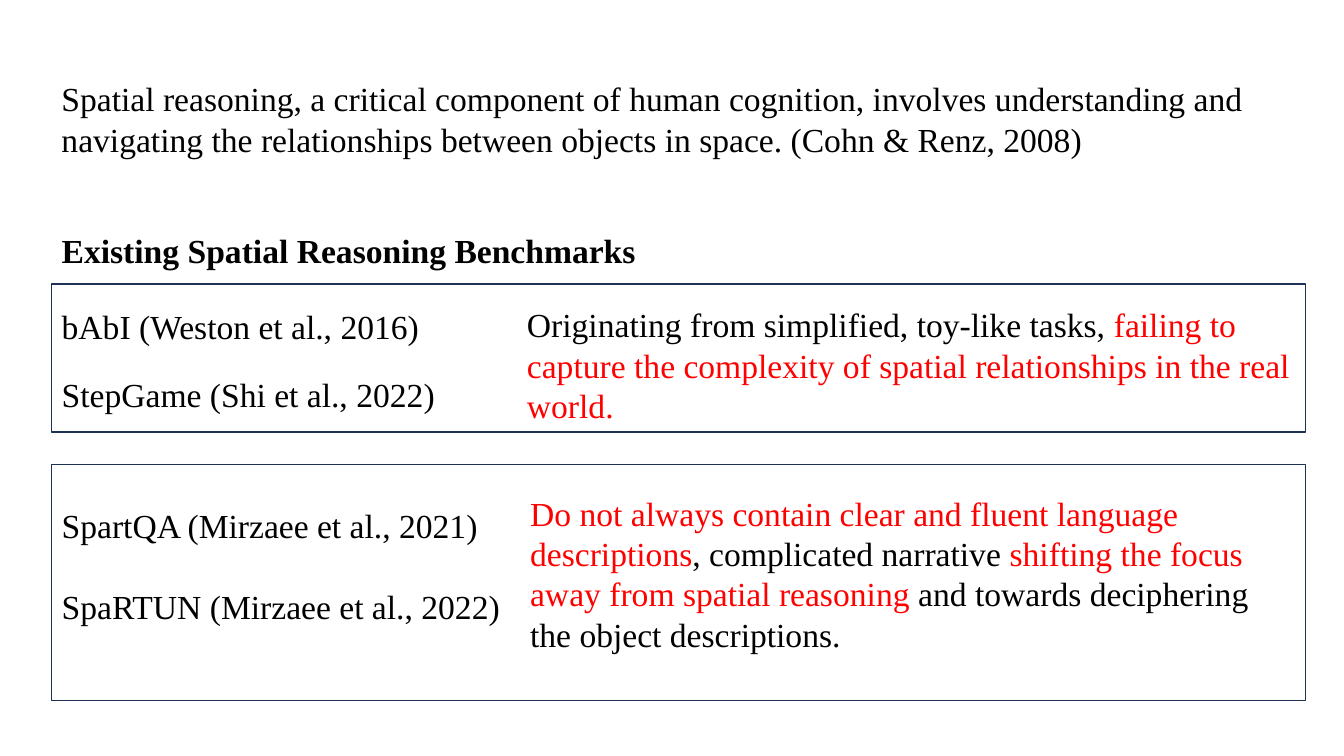
from dataclasses import dataclass

import pptx
import pptx.dml.color
import pptx.enum.shapes
import pptx.enum.text
import pptx.util
from pptx.util import Cm, Pt


@dataclass(frozen=True)
class Theme:
    font: str = "Times New Roman"
    size: float = 24
    text: str = "000000"
    criticism: str = "FF0000"
    frame: str = "1E3256"
    frame_width: float = 1


THEME = Theme()

INTRO = [("Spatial reasoning, a critical component of human cognition, involves understanding and "
          "navigating the relationships between objects in space. (Cohn & Renz, 2008)", THEME.text)]
HEADING = "Existing Spatial Reasoning Benchmarks"

# Lengths in centimetres; each remark is a list of (text, colour)
GROUPS = [
    {
        "benchmarks": ["bAbI (Weston et al., 2016)", "StepGame (Shi et al., 2022)"],
        "remark": [
            ("Originating from simplified, toy-like tasks, ", THEME.text),
            ("failing to capture the complexity of spatial relationships in the real world.",
             THEME.criticism),
        ],
        "frame_top": 7.16, "frame_height": 3.73,
        "list_top": 7.57, "list_gap": 20,
        "remark_box": (13.03, 7.54, 21.06, 3.33),
    },
    {
        "benchmarks": ["SpartQA (Mirzaee et al., 2021)", "SpaRTUN (Mirzaee et al., 2022)"],
        "remark": [
            ("Do not always contain clear and fluent language descriptions", THEME.criticism),
            (", complicated narrative ", THEME.text),
            ("shifting the focus away from spatial reasoning", THEME.criticism),
            (" and towards deciphering the object descriptions.", THEME.text),
        ],
        "frame_top": 11.71, "frame_height": 5.94,
        "list_top": 12.6, "list_gap": 29,
        "remark_box": (13.11, 12.29, 19.76, 4.37),
    },
]

LEFT = 1.3
FRAME_WIDTH = 31.6
LIST_WIDTH = 12
LIST_HEIGHT = 3.3


def rgb(value):
    return pptx.dml.color.RGBColor.from_string(value)


def place(shape, left, top, width, height):
    shape.left, shape.top, shape.width, shape.height = map(Cm, (left, top, width, height))


def style_run(run, color=THEME.text, bold=False):
    run.font.name = THEME.font
    run.font.size = Pt(THEME.size)
    run.font.bold = bold
    run.font.color.rgb = rgb(color)


def prepare_frame(text_frame):
    text_frame.word_wrap = True
    text_frame.auto_size = pptx.enum.text.MSO_AUTO_SIZE.NONE
    text_frame.vertical_anchor = pptx.enum.text.MSO_ANCHOR.TOP


def add_passage(slide, box, pieces):
    passage = slide.shapes.add_textbox(*map(Cm, box))
    prepare_frame(passage.text_frame)
    for text, color in pieces:
        run = passage.text_frame.paragraphs[0].add_run()
        run.text = text
        style_run(run, color)


def fill_placeholder(placeholder, box, lines, gap=0, bold=False):
    """Set unbulleted, left-aligned lines with a gap in points between them."""
    place(placeholder, *box)
    text_frame = placeholder.text_frame
    text_frame.text = "\n".join(lines)
    prepare_frame(text_frame)
    for index, paragraph in enumerate(text_frame.paragraphs):
        paragraph.alignment = pptx.enum.text.PP_ALIGN.LEFT
        paragraph.space_before = Pt(gap if index else 0)
        properties = paragraph._p.get_or_add_pPr()
        properties.set("marL", "0")
        properties.set("indent", "0")
        properties.append(pptx.oxml.parse_xml(
            '<a:buNone xmlns:a="http://schemas.openxmlformats.org/drawingml/2006/main"/>'))
        for run in paragraph.runs:
            style_run(run, bold=bold)


def add_frame(slide, top, height):
    frame = slide.shapes.add_shape(pptx.enum.shapes.MSO_SHAPE.RECTANGLE,
                                   Cm(LEFT), Cm(top), Cm(FRAME_WIDTH), Cm(height))
    frame.shadow.inherit = False
    frame.fill.background()
    frame.line.color.rgb = rgb(THEME.frame)
    frame.line.width = Pt(THEME.frame_width)


def main():
    deck = pptx.Presentation()
    deck.slide_width, deck.slide_height = Cm(33.87), Cm(19.05)
    slide = deck.slides.add_slide(deck.slide_layouts.get_by_name("Two Content"))

    add_passage(slide, (LEFT, 1.85, 32.8, 2.31), INTRO)
    fill_placeholder(slide.shapes.title, (LEFT, 5.66, 15.34, 1.27), [HEADING], bold=True)

    for group, body in zip(GROUPS, (slide.placeholders[1], slide.placeholders[2])):
        add_frame(slide, group["frame_top"], group["frame_height"])
        fill_placeholder(body, (LEFT, group["list_top"], LIST_WIDTH, LIST_HEIGHT),
                         group["benchmarks"], group["list_gap"])
        add_passage(slide, group["remark_box"], group["remark"])

    deck.save("out.pptx")


if __name__ == "__main__":
    main()
